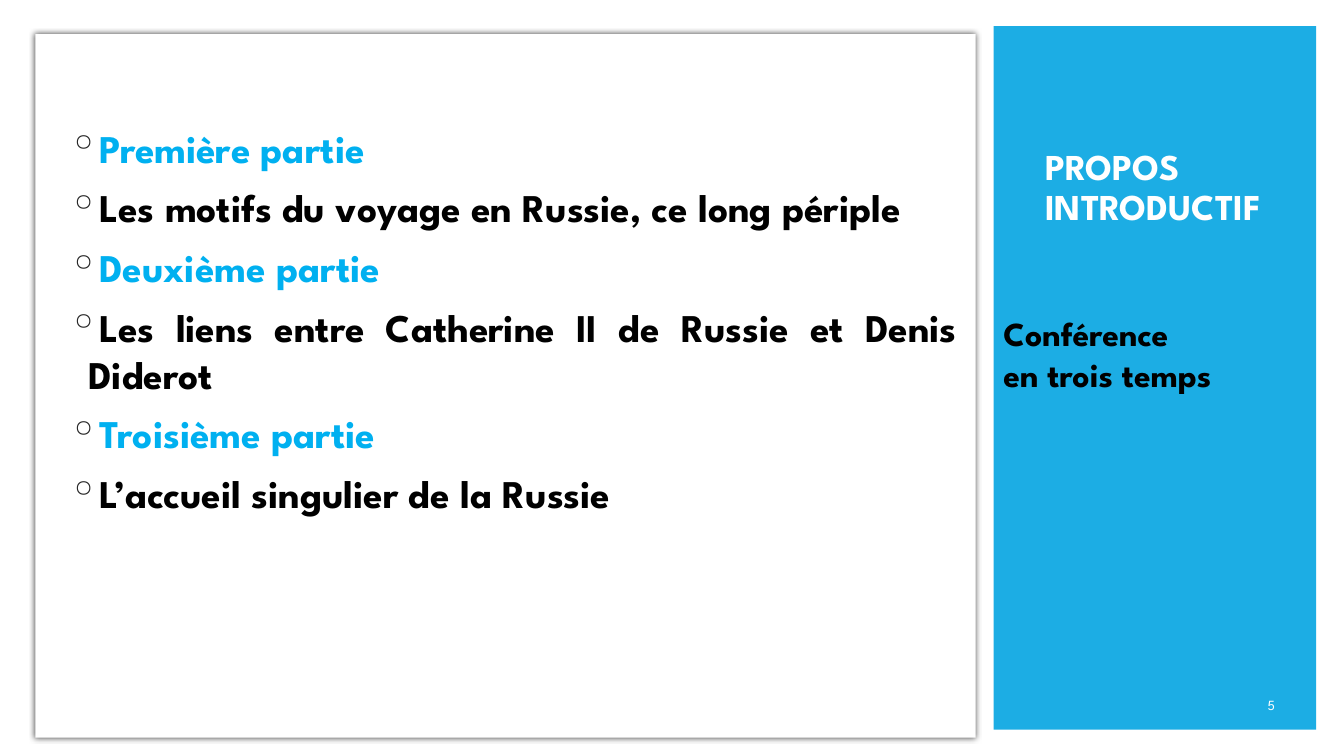
"""Build the conference outline slide with its blue side panel."""
from dataclasses import dataclass, field
from typing import Any

from lxml import etree
from pptx import Presentation
from pptx import util as u
from pptx.dml import color
from pptx.enum import shapes, text
from pptx.oxml import ns

FONT = "League Spartan"
WHITE, BLACK, SKY, BLUE = "FFFFFF", "000000", "00B0F0", "1CADE4"
BULLET_COLOR = "262626"
BULLET_INDENT = u.Cm(0.51)
PAGE_WIDTH, PAGE_HEIGHT = 33.87, 19.05


@dataclass
class Place:
    left: float
    top: float
    width: float
    height: float

    def lengths(self) -> list[u.Length]:
        return [u.Cm(n) for n in (self.left, self.top, self.width, self.height)]


@dataclass
class Panel:
    place: Place
    fill: str
    shadow: bool = False


@dataclass
class Line:
    words: str
    color: str


@dataclass
class TextBlock:
    place: Place
    lines: list[Line]
    size: float
    bold: bool = True
    anchor: Any = text.MSO_ANCHOR.TOP
    bullet: str = ""
    formats: dict[str, Any] = field(default_factory=dict)


PANELS = [
    Panel(Place(0, 0, PAGE_WIDTH, PAGE_HEIGHT), WHITE),
    Panel(Place(0.89, 0.86, 23.7, 17.73), WHITE, shadow=True),
    Panel(Place(25.04, 0.66, 8.13, 17.73), BLUE),
]

PARTS = [
    ("Première partie", "Les motifs du voyage en Russie, ce long périple"),
    ("Deuxième partie", "Les liens entre Catherine II de Russie et Denis Diderot"),
    ("Troisième partie", "L’accueil singulier de la Russie"),
]

BLOCKS = [
    TextBlock(Place(26.09, 1.7, 6.25, 4.17), [Line("PROPOS INTRODUCTIF", WHITE)], 26,
              anchor=text.MSO_ANCHOR.BOTTOM, formats={"line_spacing": 0.9}),
    TextBlock(Place(28.32, 17.35, 4.06, 0.76), [Line("5", WHITE)], 10, bold=False,
              anchor=text.MSO_ANCHOR.BOTTOM,
              formats={"alignment": text.PP_ALIGN.RIGHT, "space_after": u.Pt(6)}),
    TextBlock(Place(25.04, 7.77, 9.27, 2.31),
              [Line("Conférence", BLACK), Line("en trois temps", BLACK)], 24),
    TextBlock(Place(1.47, 3, 22.89, 13.84),
              [Line(words, tint) for part in PARTS
               for words, tint in zip(part, (SKY, BLACK))], 28, bullet="◦",
              formats={"alignment": text.PP_ALIGN.JUSTIFY, "space_before": u.Pt(9)}),
]


def apply(target: Any, formats: dict[str, Any]) -> None:
    """Set every format value as an attribute of the target."""
    for name, value in formats.items():
        setattr(target, name, value)


def rgb(value: str) -> color.RGBColor:
    """Turn a hex string into a colour."""
    return color.RGBColor.from_string(value)


def add_node(parent: Any, tag: str, **attributes: Any) -> Any:
    """Append a DrawingML element with the given attributes."""
    values = {name: str(value) for name, value in attributes.items()}
    return etree.SubElement(parent, ns.qn(tag), values)


def draw_panel(page: Any, panel: Panel) -> None:
    """Draw a borderless rectangle, with a soft glow-like shadow if asked."""
    box = page.shapes.add_shape(shapes.MSO_SHAPE.RECTANGLE, *panel.place.lengths())
    box.fill.solid()
    box.fill.fore_color.rgb = rgb(panel.fill)
    box.line.fill.background()
    box.shadow.inherit = False
    if panel.shadow:
        effects = box.element.spPr.find(ns.qn("a:effectLst"))
        shadow = add_node(effects, "a:outerShdw", blurRad=u.Pt(4), dist=0, dir=0,
                          algn="ctr", rotWithShape=0)
        tint = add_node(shadow, "a:srgbClr", val=BLACK)
        add_node(tint, "a:alpha", val=66000)


def add_bullet(para: Any, bullet: str) -> None:
    """Give a paragraph a hanging bullet."""
    settings = para._p.get_or_add_pPr()
    settings.set("marL", str(BULLET_INDENT))
    settings.set("indent", str(-BULLET_INDENT))
    tint = add_node(settings, "a:buClr")
    add_node(tint, "a:srgbClr", val=BULLET_COLOR)
    add_node(settings, "a:buChar", char=bullet)


def draw_text(page: Any, block: TextBlock) -> None:
    """Draw a text box with one paragraph per line."""
    frame = page.shapes.add_textbox(*block.place.lengths()).text_frame
    apply(frame, {"word_wrap": True, "vertical_anchor": block.anchor})
    for index, line in enumerate(block.lines):
        para = frame.add_paragraph() if index else frame.paragraphs[0]
        apply(para, block.formats)
        if block.bullet:
            add_bullet(para, block.bullet)
        span = para.add_run()
        span.text = line.words
        apply(span.font, {"name": FONT, "size": u.Pt(block.size), "bold": block.bold})
        span.font.color.rgb = rgb(line.color)


def main() -> None:
    """Build and save the deck."""
    deck = Presentation()
    apply(deck, {"slide_width": u.Cm(PAGE_WIDTH), "slide_height": u.Cm(PAGE_HEIGHT)})
    page = deck.slides.add_slide(deck.slide_layouts[6])
    for panel in PANELS:
        draw_panel(page, panel)
    for block in BLOCKS:
        draw_text(page, block)
    deck.save("out.pptx")


if __name__ == "__main__":
    main()
